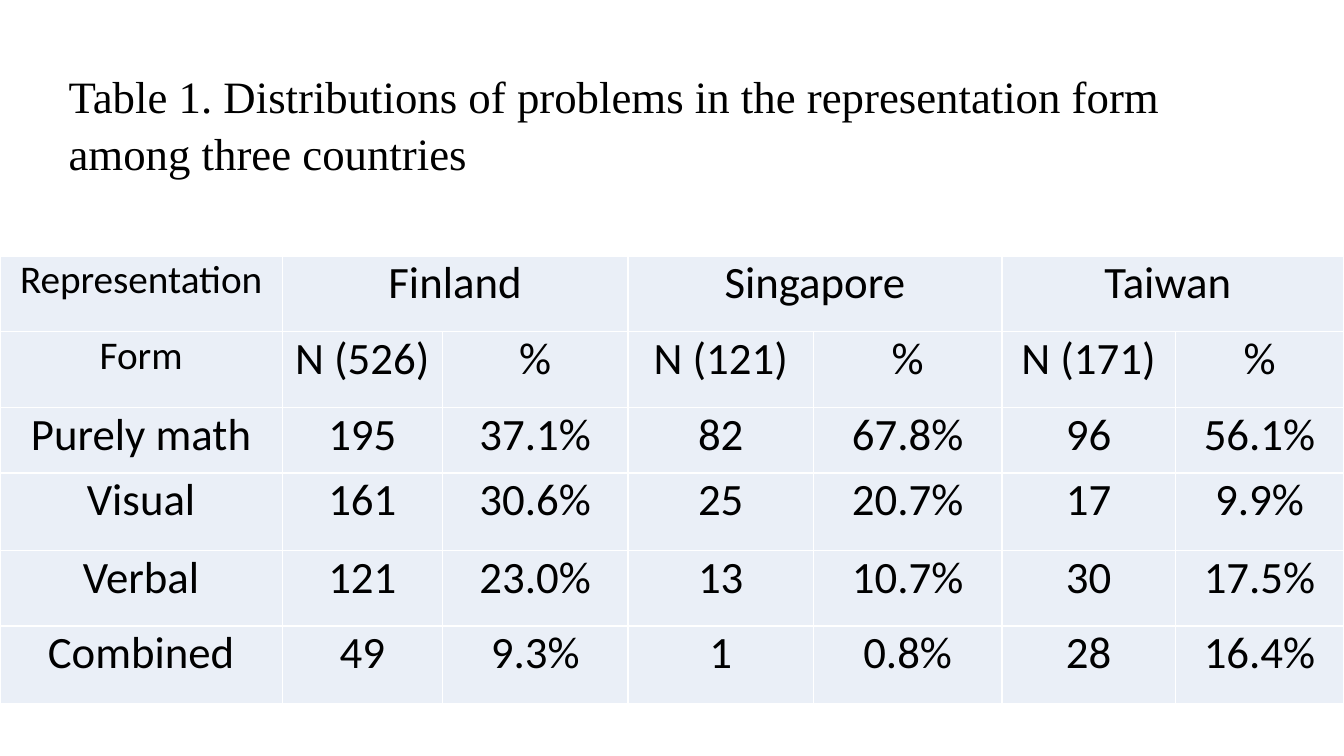
from dataclasses import dataclass

import lxml.etree
import pptx
import pptx.dml.color
import pptx.enum.text
import pptx.oxml.ns
import pptx.util

Pt = pptx.util.Pt
PP_ALIGN = pptx.enum.text.PP_ALIGN
MSO_ANCHOR = pptx.enum.text.MSO_ANCHOR

BLACK = "000000"
WHITE = "FFFFFF"
CELL_FILL = "EAEFF7"
COL_WIDTHS = (201.6, 114.5, 132.5, 132.5, 134.6, 123.8, 120.5)
ROW_HEIGHTS = (54, 54, 46.8, 55.4, 54, 55.4)


@dataclass
class Row:
    label: str
    values: tuple[str, ...]
    label_size: float = 32


@dataclass
class Country:
    name: str
    total: int


COUNTRIES = (Country("Finland", 526), Country("Singapore", 121), Country("Taiwan ", 171))
ROWS = (
    Row("Representation", tuple(t for c in COUNTRIES for t in (c.name, "")), 28),
    Row("Form", tuple(t for c in COUNTRIES for t in (f"N ({c.total})", "%")), 28),
    Row("Purely math", ("195", "37.1%", "82", "67.8%", "96", "56.1%")),
    Row("Visual", ("161", "30.6%", "25", "20.7%", "17", "9.9%")),
    Row("Verbal", ("121", "23.0%", "13", "10.7%", "30", "17.5%")),
    Row("Combined", ("49", "9.3%", "1", "0.8%", "28", "16.4%")),
)


def rgb(color: str) -> pptx.dml.color.RGBColor:
    return pptx.dml.color.RGBColor.from_string(color)


def set_font(p, name: str, size: float) -> None:
    p.font.name = name
    p.font.size = Pt(size)
    p.font.bold = False
    p.font.color.rgb = rgb(BLACK)


def add_borders(cell, color: str, width: float) -> None:
    qn = pptx.oxml.ns.qn
    tc_pr = cell._tc.get_or_add_tcPr()
    for i, side in enumerate(("a:lnL", "a:lnR", "a:lnT", "a:lnB")):
        ln = lxml.etree.Element(qn(side), w=str(Pt(width)))
        fill = lxml.etree.SubElement(ln, qn("a:solidFill"))
        lxml.etree.SubElement(fill, qn("a:srgbClr"), val=color)
        tc_pr.insert(i, ln)


def fill_cell(cell, text: str, size: float) -> None:
    cell.fill.solid()
    cell.fill.fore_color.rgb = rgb(CELL_FILL)
    cell.margin_left = cell.margin_right = Pt(5)
    cell.margin_top = cell.margin_bottom = 0
    cell.vertical_anchor = MSO_ANCHOR.TOP
    add_borders(cell, WHITE, 1)
    p = cell.text_frame.paragraphs[0]
    p.text = text
    p.alignment = PP_ALIGN.CENTER
    p.space_before = Pt(6)
    set_font(p, "Calibri", size)


def add_title(slide, text: str) -> None:
    sp = slide.shapes.title
    sp.left, sp.top, sp.width, sp.height = Pt(41.8), Pt(43.2), Pt(888.5), Pt(85)
    tf = sp.text_frame
    tf.word_wrap = True
    tf.auto_size = pptx.enum.text.MSO_AUTO_SIZE.NONE
    tf.vertical_anchor = MSO_ANCHOR.TOP
    p = tf.paragraphs[0]
    p.text = text
    p.alignment = PP_ALIGN.LEFT
    p.line_spacing = 1.06
    set_font(p, "Times New Roman", 32)


def add_distribution_table(slide) -> None:
    table = slide.shapes.add_table(
        len(ROWS), len(COL_WIDTHS), 0, Pt(183), Pt(sum(COL_WIDTHS)), Pt(sum(ROW_HEIGHTS))
    ).table
    table.first_row = table.horz_banding = False
    for col, width in zip(table.columns, COL_WIDTHS):
        col.width = Pt(width)
    for i, (row, height) in enumerate(zip(ROWS, ROW_HEIGHTS)):
        table.rows[i].height = Pt(height)
        fill_cell(table.cell(i, 0), row.label, row.label_size)
        for j, value in enumerate(row.values, 1):
            fill_cell(table.cell(i, j), value, 32)
    for j in range(1, len(COL_WIDTHS), 2):
        table.cell(0, j).merge(table.cell(0, j + 1))


def main() -> None:
    prs = pptx.Presentation()
    prs.slide_width, prs.slide_height = Pt(960), Pt(540)
    slide = prs.slides.add_slide(prs.slide_layouts[5])
    add_distribution_table(slide)
    add_title(
        slide,
        "Table 1. Distributions of problems in the representation form among three countries",
    )
    prs.save("out.pptx")


if __name__ == "__main__":
    main()
